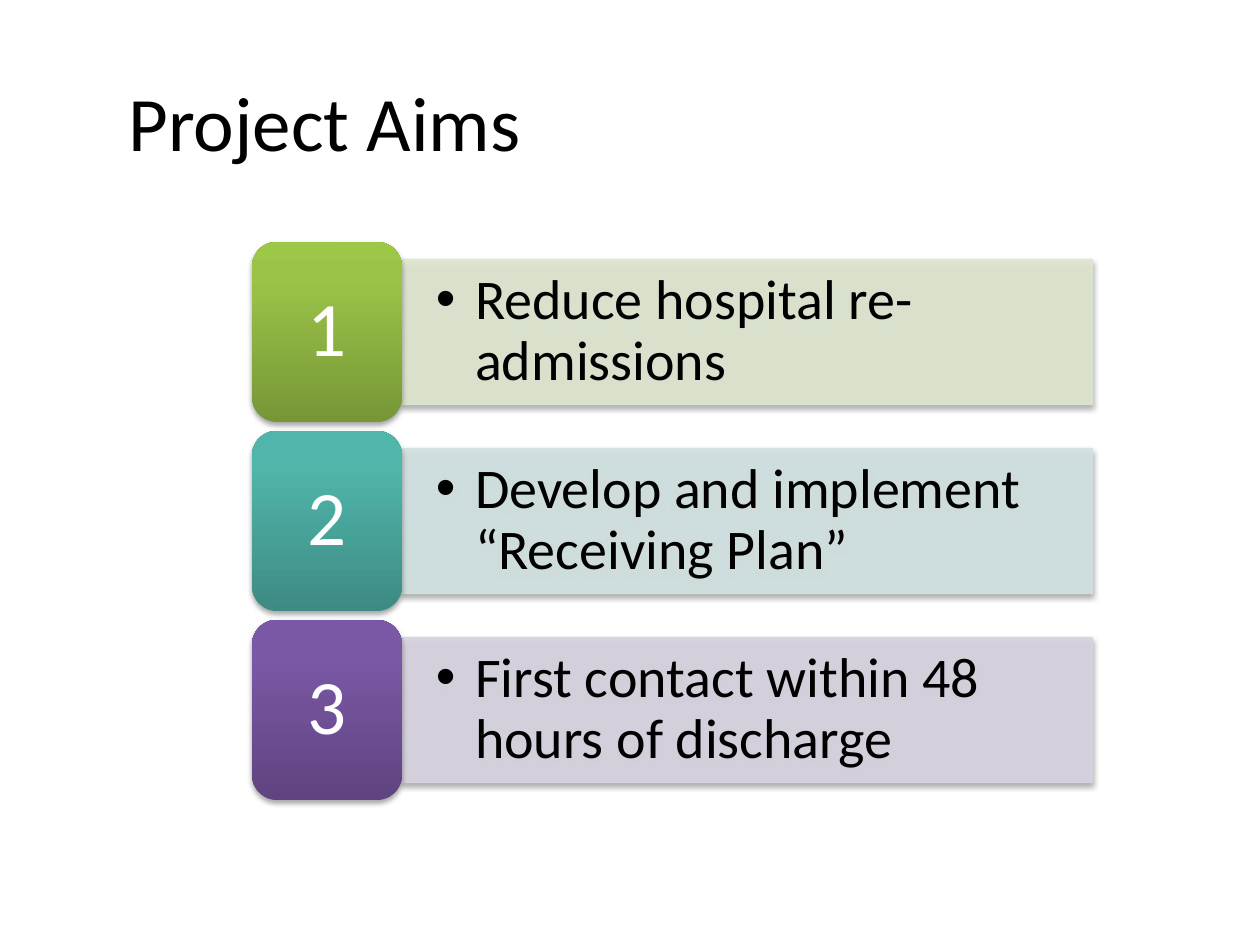
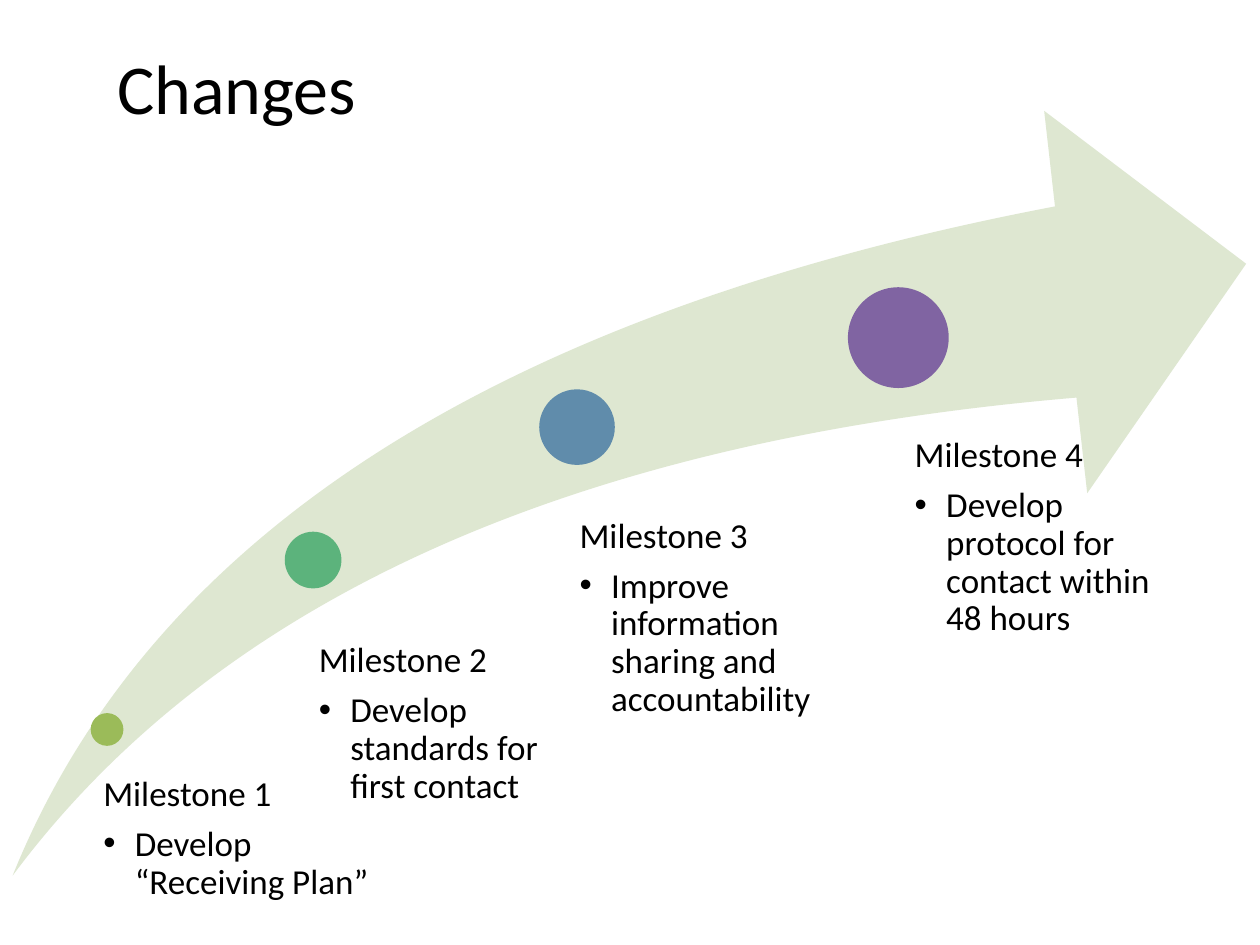
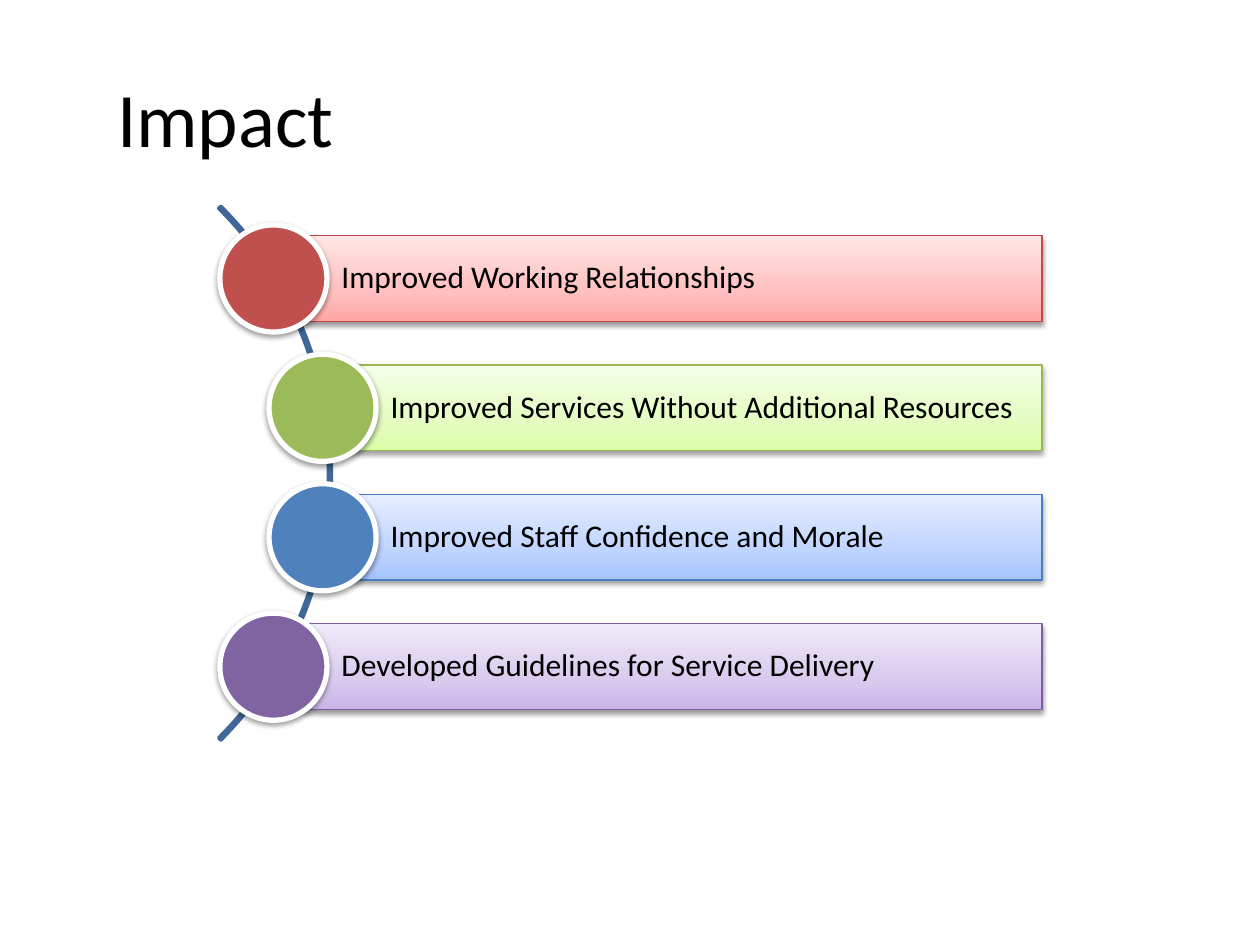
from lxml import etree
from pptx import Presentation
from pptx.dml.color import RGBColor
from pptx.enum.shapes import MSO_SHAPE as Preset
from pptx.enum.text import MSO_ANCHOR as Anchor, MSO_AUTO_SIZE as AutoSize, PP_ALIGN as Align
from pptx.oxml.ns import qn
from pptx.util import Inches, Pt

FONT = "Calibri"
BLACK, WHITE = "000000", "FFFFFF"
PALE_GREEN, LEAF, PURPLE = "DEE7D1", "9BBB59", "8064A2"
TITLE_ONLY = 5

AIMS = [
    ("Reduce hospital re-admissions", PALE_GREEN,
     [(0, "779737"), (80, "9BC348"), (100, "9DC746")]),
    ("Develop and implement “Receiving Plan”", "D2E3E2",
     [(0, "3D8B83"), (80, "50B5AA"), (100, "4EB8AC")]),
    ("First contact within 48 hours of discharge", "D8D3E0",
     [(0, "5F4480"), (80, "7B58A6"), (100, "7C57A8")]),
]
# action, dot colour, dot (left, top, diameter), text box, left inset
MILESTONES = [
    ("Develop “Receiving Plan”", LEAF,
     (0.72, 5.66, 0.26), (0.68, 6.16, 2.33, 1.3), 0.14),
    ("Develop standards for first contact", "5CB37C",
     (2.26, 4.22, 0.45), (2.29, 5.1, 2.37, 2.35), 0.24),
    ("Improve information sharing and accountability", "608CAB",
     (4.28, 3.09, 0.6), (4.28, 4.11, 2.37, 2.65), 0.32),
    ("Develop protocol for contact within 48 hours", PURPLE,
     (6.73, 2.28, 0.8), (6.84, 3.47, 2.37, 3.26), 0.42),
]
# impact, bar left, dot colour, bar outline, bar gradient
IMPACTS = [
    ("Improved Working Relationships", 2.17, "C0504D", "BF4C48",
     [(0, "FFA6A5"), (35, "FFC0BF"), (100, "FFE7E7")]),
    ("Improved Services Without Additional Resources", 2.56, LEAF, "98B955",
     [(0, "DAFDA7"), (35, "E4FCC2"), (100, "F5FFE7")]),
    ("Improved Staff Confidence and Morale", 2.56, "4F81BD", "4B7EBC",
     [(0, "A4C4FF"), (35, "BFD4FF"), (100, "E6EEFF")]),
    ("Developed Guidelines for Service Delivery", 2.17, PURPLE, "7D60A0",
     [(0, "C9B5E8"), (35, "D8CBEE"), (100, "F0EAF9")]),
]


def rgb(value):
    return RGBColor.from_string(value)


def set_format(target, **values):
    for name, value in values.items():
        setattr(target, name, value)


def add_color(parent, color, alpha=None):
    """Append an a:srgbClr, with opacity in percent if given."""
    node = etree.SubElement(parent, qn("a:srgbClr"), val=color)
    if alpha is not None:
        etree.SubElement(node, qn("a:alpha"), val=str(alpha * 1000))


def fill_gradient(shape, stops):
    """Fill from bottom to top with (percent, colour) stops."""
    shape.fill.gradient()
    shape.fill.gradient_angle = 90
    stop_list = shape._element.spPr.find(".//" + qn("a:gsLst"))
    for old in list(stop_list):
        stop_list.remove(old)
    for percent, color in stops:
        add_color(etree.SubElement(stop_list, qn("a:gs"), pos=str(percent * 1000)), color)


def set_opacity(shape, alpha):
    """Make the solid fill and the line partly transparent."""
    for solid in shape._element.spPr.iter(qn("a:solidFill")):
        color = solid[0].get("val")
        solid.remove(solid[0])
        add_color(solid, color, alpha)


def add_shadow(shape, alpha, distance):
    effects = shape._element.spPr.find(qn("a:effectLst"))
    shadow = etree.SubElement(
        effects, qn("a:outerShdw"), blurRad=str(Pt(3.1)), dist=str(Pt(distance)),
        dir="5400000", rotWithShape="0")
    add_color(shadow, BLACK, alpha)


def add_figure(slide, preset, box, fill=None, line=None, width=0.75):
    """Add a preset shape; fill is a colour, a list of gradient stops or None."""
    shape = slide.shapes.add_shape(preset, *map(Inches, box))
    shape.shadow.inherit = False
    if fill is None:
        shape.fill.background()
    elif isinstance(fill, list):
        fill_gradient(shape, fill)
    else:
        shape.fill.solid()
        shape.fill.fore_color.rgb = rgb(fill)
    if line:
        shape.line.color.rgb = rgb(line)
        shape.line.width = Pt(width)
    else:
        shape.line.fill.background()
    return shape


def set_frame(frame, insets, anchor):
    left, top, right, bottom = map(Inches, insets)
    set_format(frame, word_wrap=True, auto_size=AutoSize.NONE, vertical_anchor=anchor,
               margin_left=left, margin_top=top, margin_right=right, margin_bottom=bottom)


def write(paragraph, text, size, color=BLACK, align=Align.LEFT, hang=0, spacing=0.9):
    """Fill a paragraph; hang is the bullet's hanging indent, 0 for no bullet."""
    paragraph.text = text
    if hang:
        paragraph.level = 1
        props = paragraph._p.get_or_add_pPr()
        props.set("marL", str(Inches(hang)))
        props.set("indent", str(-Inches(hang)))
        etree.SubElement(props, qn("a:buFont"), typeface="Arial")
        etree.SubElement(props, qn("a:buChar"), char="•")
    set_format(paragraph, alignment=align, line_spacing=spacing)
    set_format(paragraph.font, name=FONT, size=Pt(size))
    paragraph.font.color.rgb = rgb(color)


def add_titled_slide(deck, text, left=0.83, top=0.3, size=44, anchor=Anchor.MIDDLE):
    slide = deck.slides.add_slide(deck.slide_layouts[TITLE_ONLY])
    title = slide.shapes.title
    set_format(title, left=Inches(left), top=Inches(top),
               width=Inches(8.83), height=Inches(1.25))
    set_frame(title.text_frame, (0.1, 0.05, 0.1, 0.05), anchor)
    write(title.text_frame.paragraphs[0], text, size, spacing=1.0)
    return slide


def add_aim(slide, number, text, tint, stops):
    top = 1.92 + 1.5 * (number - 1)
    bar = add_figure(slide, Preset.RECTANGLE, (3.19, top + 0.14, 5.48, 1.15), tint, tint)
    set_opacity(bar, 90)
    set_frame(bar.text_frame, (0.27, 0.14, 0.27, 0.14), Anchor.MIDDLE)
    write(bar.text_frame.paragraphs[0], text, 32, hang=0.31)

    badge = add_figure(slide, Preset.ROUNDED_RECTANGLE, (2, top, 1.19, 1.43), stops)
    set_frame(badge.text_frame, (0.18, 0.09, 0.18, 0.09), Anchor.MIDDLE)
    write(badge.text_frame.paragraphs[0], str(number), 44, WHITE, Align.CENTER)
    for part in (bar, badge):
        add_shadow(part, 35, 1.8)


def add_milestone(slide, number, action, color, dot, box, inset):
    left, top, diameter = dot
    add_figure(slide, Preset.OVAL, (left, top, diameter, diameter), color)
    frame = slide.shapes.add_textbox(*map(Inches, box)).text_frame
    set_frame(frame, (inset, 0, 0, 0), Anchor.TOP)
    heading = frame.paragraphs[0]
    write(heading, f"Milestone {number}", 20)
    heading.space_after = Pt(7)
    write(frame.add_paragraph(), action, 20, hang=0.25)


def add_impact(slide, row, text, left, color, outline, stops):
    height, diameter, right = 0.68, 0.85, 8.27
    top = 1.87 + 1.027 * row
    bar = add_figure(slide, Preset.RECTANGLE, (left, top, right - left, height), stops, outline)
    set_frame(bar.text_frame, (0.54, 0.05, 0.05, 0.05), Anchor.MIDDLE)
    write(bar.text_frame.paragraphs[0], text, 18)

    dot_box = (left - diameter / 2, top + (height - diameter) / 2, diameter, diameter)
    dot = add_figure(slide, Preset.OVAL, dot_box, color, WHITE, 3)
    for part in (bar, dot):
        add_shadow(part, 38, 1.6)


def build_aims(deck):
    slide = add_titled_slide(deck, "Project Aims", left=0.92, top=0.33)
    for number, aim in enumerate(AIMS, 1):
        add_aim(slide, number, *aim)


def build_changes(deck):
    slide = add_titled_slide(deck, "Changes", size=40, anchor=Anchor.TOP)
    swoosh = add_figure(slide, Preset.SWOOSH_ARROW, (0.1, 0.88, 9.79, 6.07), PALE_GREEN)
    swoosh.adjustments[0] = swoosh.adjustments[1] = 0.25
    for number, milestone in enumerate(MILESTONES, 1):
        add_milestone(slide, number, *milestone)


def build_impact(deck):
    slide = add_titled_slide(deck, "Impact")
    arc = add_figure(slide, Preset.BLOCK_ARC, (-3.36, 0.76, 5.99, 5.99), line="3F6797", width=2)
    for index, value in enumerate((189, 27, 0.004)):
        arc.adjustments[index] = value
    for row, impact in enumerate(IMPACTS):
        add_impact(slide, row, *impact)


def main():
    deck = Presentation()
    set_format(deck, slide_width=Inches(10), slide_height=Inches(7.5))
    build_aims(deck)
    build_changes(deck)
    build_impact(deck)
    deck.save("out.pptx")


if __name__ == "__main__":
    main()
